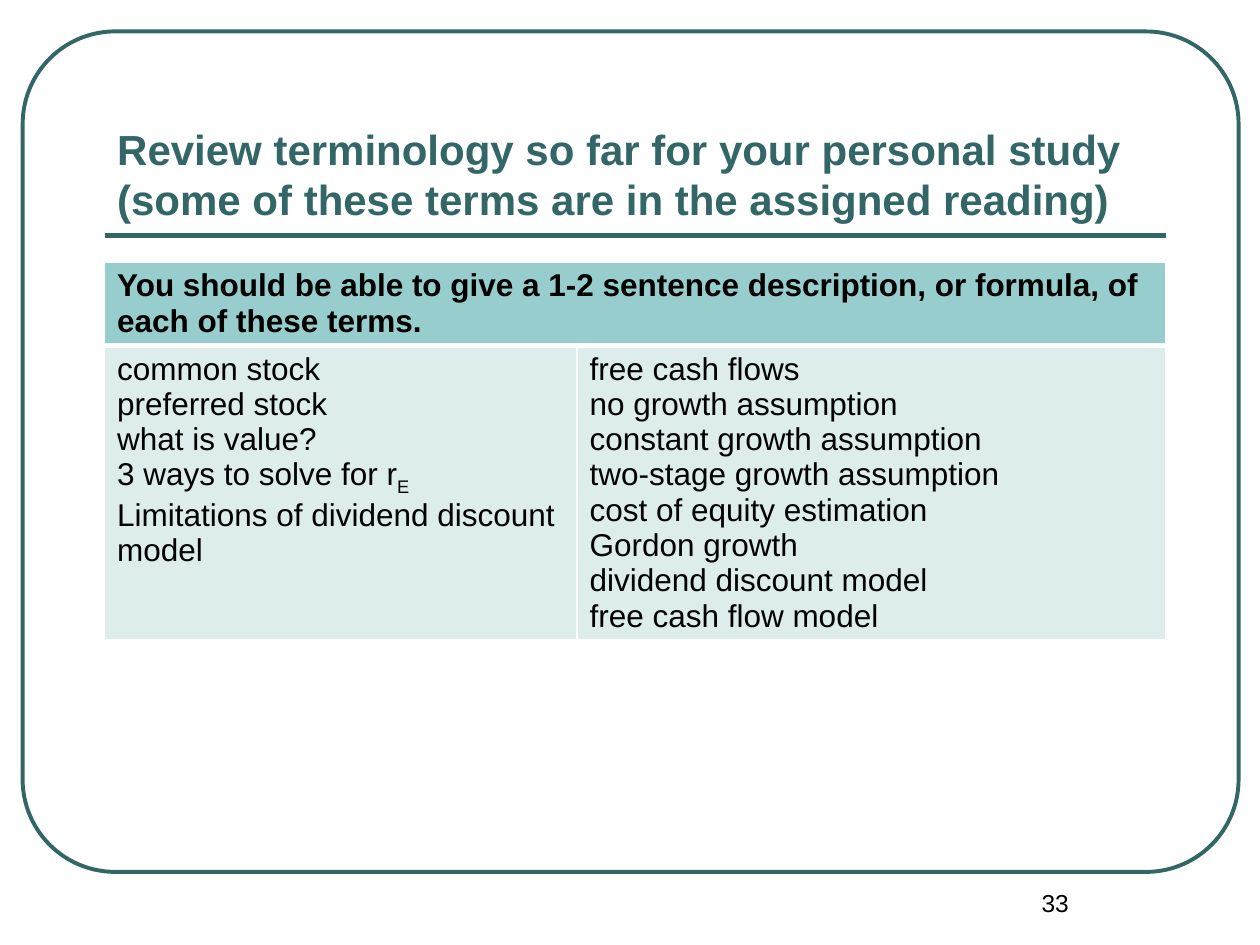
from dataclasses import dataclass

from lxml import etree
from pptx import Presentation
from pptx.dml.color import RGBColor
from pptx.enum import shapes, text
from pptx.oxml import ns
from pptx.util import Inches, Pt

TEAL = RGBColor(0x33, 0x66, 0x66)
HEADER_FILL = RGBColor(0x97, 0xCD, 0xCC)
BODY_FILL = RGBColor(0xDD, 0xED, 0xEC)
WHITE = RGBColor(0xFF, 0xFF, 0xFF)
BLACK = RGBColor(0, 0, 0)

LEFT, WIDTH = Inches(0.83), Inches(8.42)
TITLE = ("Review terminology so far for your personal study\v"
         "(some of these terms are in the assigned reading)")


@dataclass
class Column:
    width: float
    terms: list[str]


HEADING = ("You should be able to give a 1-2 sentence description, "
           "or formula, of each of these terms.")
COLUMNS = [
    Column(3.75, ["common stock", "preferred stock", "what is value?",
                  "3 ways to solve for r",
                  "Limitations of dividend discount model"]),
    Column(4.67, ["free cash flows", "no growth assumption",
                  "constant growth assumption", "two-stage growth assumption",
                  "cost of equity estimation", "Gordon growth",
                  "dividend discount model", "free cash flow model"]),
]
ROW_HEIGHTS = [0.66, 2.34]


def style_text(tf, size: float, color: RGBColor, bold: bool = False) -> None:
    for p in tf.paragraphs:
        for r in p.runs:
            r.font.name = "Arial"
            r.font.size = Pt(size)
            r.font.bold = bold
            r.font.color.rgb = color


def set_borders(cell, **widths: float) -> None:
    """Draw white borders; widths in points are keyed L, R, T and B."""
    tc_pr = cell._tc.get_or_add_tcPr()
    for side, width in widths.items():
        ln = etree.SubElement(tc_pr, ns.qn(f"a:ln{side}"), w=str(Pt(width)))
        fill = etree.SubElement(ln, ns.qn("a:solidFill"))
        etree.SubElement(fill, ns.qn("a:srgbClr"), val=str(WHITE))


def style_cell(cell, fill: RGBColor, top: float, bottom: float, bold: bool = False) -> None:
    set_borders(cell, L=1, R=1, T=top, B=bottom)
    cell.fill.solid()
    cell.fill.fore_color.rgb = fill
    style_text(cell.text_frame, 18, BLACK, bold)


def add_frame(s) -> None:
    sp = s.shapes.add_shape(shapes.MSO_SHAPE.ROUNDED_RECTANGLE, Inches(0.18),
                            Inches(0.25), Inches(9.65), Inches(6.67))
    sp.adjustments[0] = 0.11
    sp.shadow.inherit = False
    sp.fill.background()
    sp.line.color.rgb = TEAL
    sp.line.width = Pt(2.25)

    y = Inches(1.87)
    rule = s.shapes.add_connector(shapes.MSO_CONNECTOR.STRAIGHT, LEFT, y, LEFT + WIDTH, y)
    rule.line.color.rgb = TEAL
    rule.line.width = Pt(3)
    etree.SubElement(rule._element.spPr, ns.qn("a:effectLst"))


def add_title(s) -> None:
    sp = s.shapes.title
    sp.left, sp.top, sp.width, sp.height = LEFT, Inches(0.58), WIDTH, Inches(1.25)
    tf = sp.text_frame
    tf.text = TITLE
    tf.auto_size = text.MSO_AUTO_SIZE.NONE
    tf.vertical_anchor = text.MSO_ANCHOR.BOTTOM
    tf.paragraphs[0].alignment = text.PP_ALIGN.LEFT
    style_text(tf, 24, TEAL, bold=True)


def add_terms_table(s) -> None:
    table = s.shapes.add_table(len(ROW_HEIGHTS), len(COLUMNS), LEFT, Inches(2.08),
                               WIDTH, Inches(sum(ROW_HEIGHTS))).table
    for row, height in zip(table.rows, ROW_HEIGHTS):
        row.height = Inches(height)

    heading = table.cell(0, 0)
    heading.merge(table.cell(0, len(COLUMNS) - 1))
    heading.text_frame.text = HEADING
    for cell in table.rows[0].cells:
        style_cell(cell, HEADER_FILL, top=1, bottom=3, bold=True)

    for i, column in enumerate(COLUMNS):
        table.columns[i].width = Inches(column.width)
        cell = table.cell(1, i)
        cell.text_frame.text = "\n".join(column.terms)
        for p in cell.text_frame.paragraphs:
            if p.text.endswith(" r"):
                r = p.add_run()
                r.text = "E"
                r.font._element.set("baseline", "-25000")
        style_cell(cell, BODY_FILL, top=3, bottom=1)


def add_page_number(s) -> None:
    tf = s.shapes.add_textbox(Inches(7.5), Inches(7), Inches(1.75), Inches(0.5)).text_frame
    tf.word_wrap = True
    tf.text = "33"
    tf.paragraphs[0].alignment = text.PP_ALIGN.CENTER
    style_text(tf, 14, BLACK)


def main() -> None:
    prs = Presentation()
    prs.slide_width, prs.slide_height = Inches(10), Inches(7.5)
    s = prs.slides.add_slide(prs.slide_layouts[5])
    add_frame(s)
    add_title(s)
    add_terms_table(s)
    add_page_number(s)
    prs.save("out.pptx")


if __name__ == "__main__":
    main()
